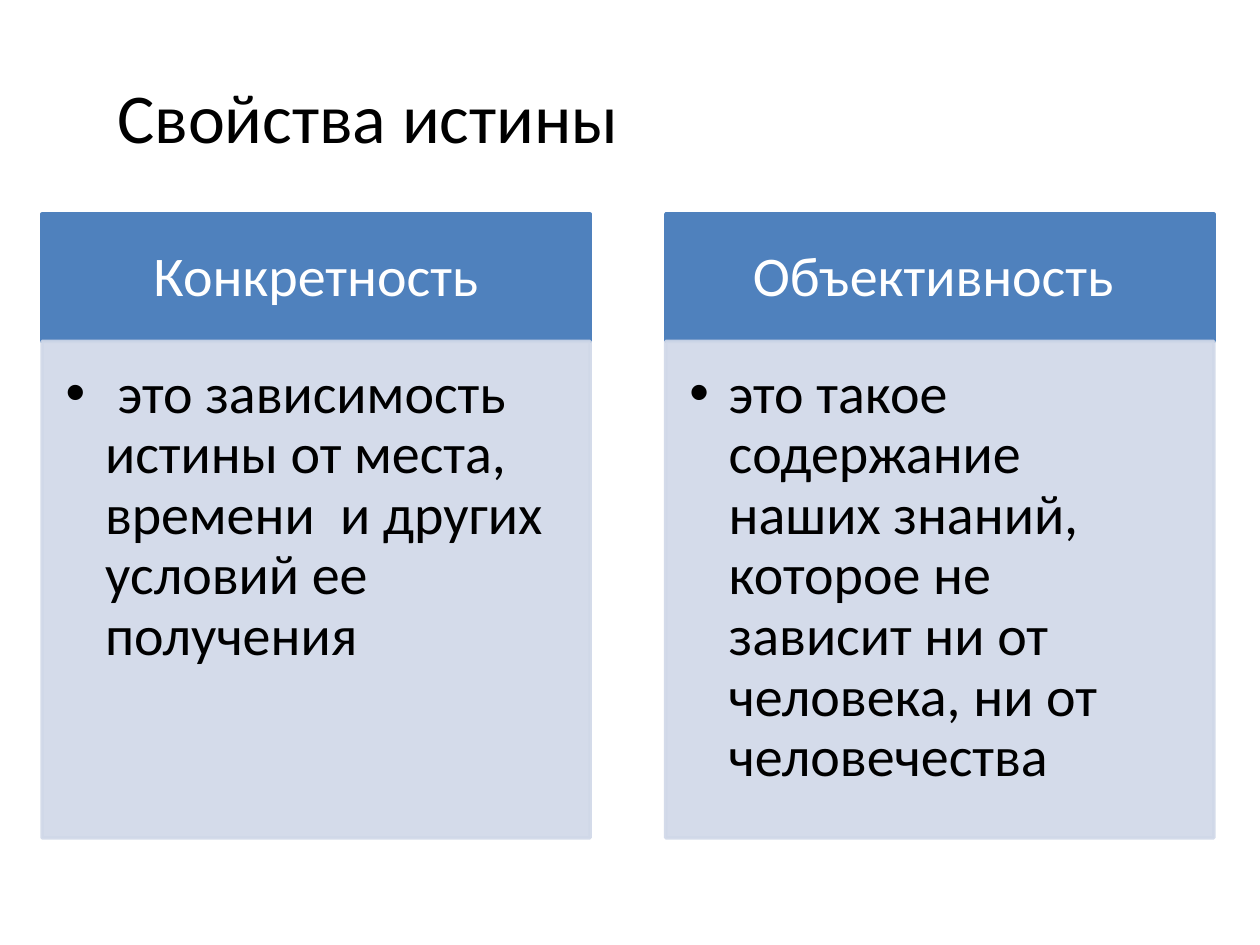
from lxml.etree import SubElement
from pptx import Presentation
from pptx.dml.color import RGBColor
from pptx.enum.shapes import MSO_SHAPE
from pptx.enum.text import MSO_ANCHOR, PP_ALIGN
from pptx.oxml.ns import qn
from pptx.util import Pt

# Content
TITLE = "Свойства истины"
PROPERTIES = [
    ("Конкретность",
     " это зависимость истины от места, времени  и других условий ее получения"),
    ("Объективность ",
     "это такое содержание наших знаний, которое не зависит ни от человека, "
     "ни от человечества"),
]

# Layout in points
LEFT, TOP, WIDTH, GAP = 24, 122.4, 313.2, 43.2
HEADING_HEIGHT, BODY_HEIGHT = 72.7, 283.7
BULLET_INDENT = 22.5


def rgb(value):
    return RGBColor.from_string(value)


def write(box, text, size=32, color="000000", align=PP_ALIGN.LEFT,
          anchor=MSO_ANCHOR.TOP, insets=(7.2, 3.6, 7.2, 3.6),
          spacing=1.0, bullet=False):
    frame = box.text_frame
    frame.word_wrap = True
    frame.vertical_anchor = anchor
    (frame.margin_left, frame.margin_top,
     frame.margin_right, frame.margin_bottom) = map(Pt, insets)
    paragraph = frame.paragraphs[0]
    paragraph.alignment = align
    paragraph.line_spacing = spacing
    if bullet:
        properties = paragraph._p.get_or_add_pPr()
        properties.set("marL", str(Pt(BULLET_INDENT)))
        properties.set("indent", str(-Pt(BULLET_INDENT)))
        SubElement(properties, qn("a:buFont"), typeface="Arial")
        SubElement(properties, qn("a:buChar"), char="•")
    run = paragraph.add_run()
    run.text = text
    run.font.name = "Calibri"
    run.font.size = Pt(size)
    run.font.color.rgb = rgb(color)


def add_panel(left, top, height, color, opacity=100):
    panel = slide.shapes.add_shape(
        MSO_SHAPE.RECTANGLE, Pt(left), Pt(top), Pt(WIDTH), Pt(height))
    panel.shadow.inherit = False
    panel.fill.solid()
    panel.fill.fore_color.rgb = rgb(color)
    panel.line.color.rgb = rgb(color)
    panel.line.width = Pt(2)
    if opacity < 100:
        for tint in panel._element.spPr.iter(qn("a:srgbClr")):
            SubElement(tint, qn("a:alpha"), val=str(opacity * 1000))
    return panel


presentation = Presentation()
presentation.slide_width, presentation.slide_height = Pt(720), Pt(540)
slide = presentation.slides.add_slide(presentation.slide_layouts[6])

# Title
title = slide.shapes.add_textbox(Pt(60), Pt(21), Pt(636), Pt(90))
write(title, TITLE, size=40, anchor=MSO_ANCHOR.MIDDLE)

# One column per property: heading above its definition
for column, (name, definition) in enumerate(PROPERTIES):
    left = LEFT + column * (WIDTH + GAP)
    heading = add_panel(left, TOP, HEADING_HEIGHT, "4F81BD")
    write(heading, name, color="FFFFFF", align=PP_ALIGN.CENTER,
          anchor=MSO_ANCHOR.MIDDLE, insets=(18, 10, 18, 10), spacing=0.9)
    body = add_panel(left, TOP + HEADING_HEIGHT, BODY_HEIGHT, "D0D8E8", opacity=90)
    write(body, definition, insets=(13.5, 13.5, 18, 20), spacing=0.9, bullet=True)

presentation.save("out.pptx")
